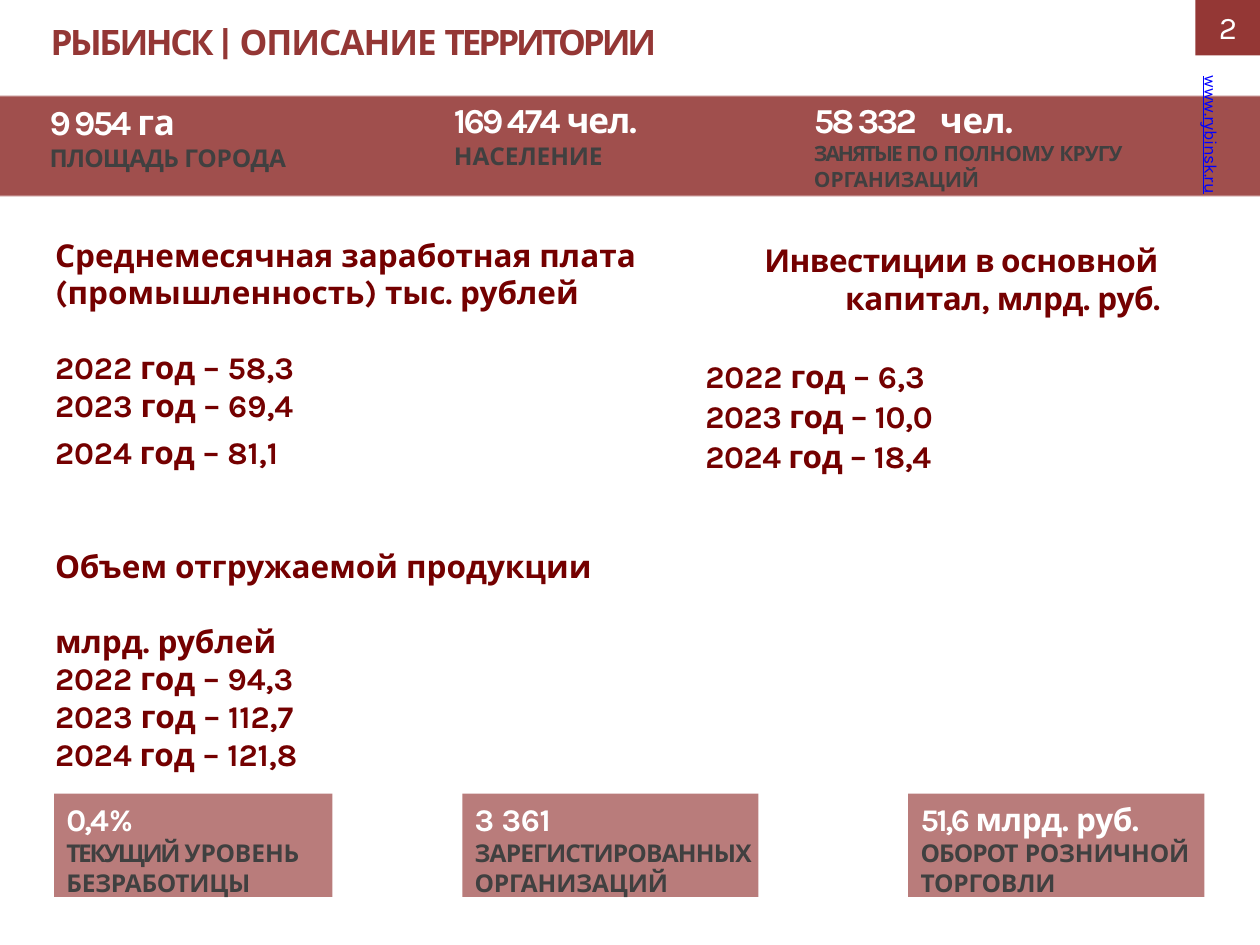
from lxml.etree import SubElement
from pptx import Presentation
from pptx.dml.color import RGBColor
from pptx.enum.shapes import MSO_SHAPE
from pptx.enum.text import MSO_ANCHOR
from pptx.oxml.ns import qn
from pptx.util import Cm, Pt

FONT = "Karla"
MAROON, DARK_RED, GREY, WHITE, BLUE = "943735", "740000", "404040", "FFFFFF", "0000FF"
BAND_TOPS = [1.96, 1.93]
TITLE = [("РЫБИНСК ", -1.4), ("| ", 0), ("ОПИСАНИЕ ", -0.6), ("ТЕРРИТОРИИ", -1.8)]

CITY_STATS = [
    {"at": (0.97, 2, 4.93, 1.52), "size": 14,
     "value": [("9 954 ", -1.6), ("га", -0.2)],
     "label": [[("ПЛОЩАДЬ ", -0.5), ("ГОРОДА", -0.1)]]},
    {"at": (9.12, 1.96, 4.27, 1.52), "size": 14,
     "value": [("169 474 ", -1.6), ("чел.", -0.7)],
     "label": [[("НАСЕЛЕНИЕ", -0.1)]]},
    {"at": (16.38, 1.96, 6.38, 1.93), "size": 12,
     "value": [("58 332\t", -1.6), ("чел.", -0.2)],
     "label": [[("ЗАНЯТЫЕ ", -1.2), ("ПО", 0), (" ПОЛНОМУ ", -0.3), ("КРУГУ", -0.5)],
               [("ОРГАНИЗАЦИЙ", -0.1)]]},
]

ECONOMY_STATS = [
    {"left": 1.09, "width": 5.61,
     "value": [("0,4", -1.2), ("%", -6.8)],
     "label": [[("ТЕКУЩИЙ ", -1.4), ("УРОВЕНЬ", -0.1)], [("БЕЗРАБОТИЦЫ", -0.2)]]},
    {"left": 9.32, "width": 5.97,
     "value": [("3 361", -0.2)],
     "label": [[("ЗАРЕГИСТИРОВАННЫХ", -0.5)], [("ОРГАНИЗАЦИЙ", -0.1)]]},
    {"left": 18.31, "width": 5.97,
     "value": [("51,6 ", -1.4), ("млрд. руб.", -0.2)],
     "label": [[("ОБОРОТ", -0.6), (" РОЗНИЧНОЙ", -0.1)], [("ТОРГОВЛИ", -0.1)]]},
]

WAGES_AND_OUTPUT = [
    ("Среднемесячная заработная плата (промышленность) тыс. рублей", 0),
    ("2022 год – 58,3", 21),
    ("2023 год – 69,4", 0),
    ("2024 год – 81,1", 5.5),
    ("Объем отгружаемой продукции", 43.5),
    ("млрд. рублей", 21),
    ("2022 год – 94,3", 0),
    ("2023 год – 112,7", 0),
    ("2024 год – 121,8", 0),
]

INVESTMENT_TITLE = [("Инвестиции ", -0.3), ("в ", -1.1), ("основной ", -0.1),
                    ("капитал, млрд. руб.", -0.2)]
INVESTMENTS = [("2022 год – 6,3", 0, 23.3), ("2023 год – 10,0", -0.2, 1.1),
               ("2024 год – 18,4", -0.2, 1.1)]


def rgb(value):
    return RGBColor.from_string(value)


def line(runs, size, color, bold=True, before=0, margin=0.0, indent=0.0, tab=None, underline=None):
    return dict(runs=runs, size=size, color=color, bold=bold, before=before,
                margin=margin, indent=indent, tab=tab, underline=underline)


def write(shape, lines, inset=(0, 0.03)):
    frame = shape.text_frame
    frame.word_wrap = True
    frame.vertical_anchor = MSO_ANCHOR.TOP
    frame.margin_left = frame.margin_right = Cm(inset[0])
    frame.margin_top = Cm(inset[1])
    frame.margin_bottom = 0
    for number, item in enumerate(lines):
        paragraph = frame.add_paragraph() if number else frame.paragraphs[0]
        properties = paragraph._p.get_or_add_pPr()
        properties.set("marL", str(Cm(item["margin"])))
        properties.set("indent", str(Cm(item["indent"])))
        properties.set("algn", "l")
        if item["before"]:
            paragraph.space_before = Pt(item["before"])
        if item["tab"]:
            tabs = SubElement(properties, qn("a:tabLst"))
            SubElement(tabs, qn("a:tab"), pos=str(Cm(item["tab"])), algn="l")
        font = paragraph.font
        font.name, font.size = FONT, Pt(item["size"])
        font.bold, font.underline = item["bold"], item["underline"]
        font.color.rgb = rgb(item["color"])
        for text, spacing in item["runs"]:
            run = paragraph.add_run()
            run.text = text
            if spacing:
                run._r.get_or_add_rPr().set("spc", str(round(spacing * 100)))


def add_text(slide, at, lines, inset=(0, 0.03)):
    box = slide.shapes.add_textbox(*map(Cm, at))
    write(box, lines, inset)
    return box


def add_block(slide, at, opacity=100):
    block = slide.shapes.add_shape(MSO_SHAPE.RECTANGLE, *map(Cm, at))
    block.shadow.inherit = False
    block.line.fill.background()
    block.fill.solid()
    block.fill.fore_color.rgb = rgb(MAROON)
    if opacity < 100:
        color = block._element.spPr.find(".//" + qn("a:srgbClr"))
        SubElement(color, qn("a:alpha"), val=str(opacity * 1000))
    return block


def stat_lines(stat, value_size, label_size, margin, tab=None):
    labels = [line(runs, label_size, GREY, margin=margin, before=0 if row else 0.1)
              for row, runs in enumerate(stat["label"])]
    return [line(stat["value"], value_size, WHITE, margin=margin, tab=tab)] + labels


def main():
    deck = Presentation()
    deck.slide_width, deck.slide_height = Cm(25.4), Cm(19.05)
    slide = deck.slides.add_slide(deck.slide_layouts[6])

    for top in BAND_TOPS:
        add_block(slide, (0, top, 25.4, 2), 65)
    add_text(slide, (0.99, 0.38, 21.08, 0.91), [line(TITLE, 20, MAROON, margin=0.03)])
    add_block(slide, (24.1, 0, 1.3, 1.12))
    add_text(slide, (24.54, 0.13, 0.43, 0.84),
             [line([("2", -0.5)], 18, WHITE, bold=False, margin=0.03)])

    for stat in CITY_STATS:
        add_text(slide, stat["at"], stat_lines(stat, 20, stat["size"], 0.03, tab=2.64))

    site = add_text(slide, (24.13, 1.47, 0.51, 2.59),
                    [line([("www.rybinsk.ru", -0.1)], 10, BLUE, bold=False,
                          margin=0.03, underline=True)])
    site.text_frame._txBody.bodyPr.set("vert", "vert")

    for stat in ECONOMY_STATS:
        block = add_block(slide, (stat["left"], 16, stat["width"], 2.08), 65)
        write(block, stat_lines(stat, 18, 14, 0.25), (0, 0.13))

    investments = [line(INVESTMENT_TITLE, 18, DARK_RED, margin=2.87, indent=-1.63)]
    investments += [line([(text, spacing)], 18, DARK_RED, before=before, margin=0.05)
                    for text, spacing, before in INVESTMENTS]
    add_text(slide, (14.17, 4.83, 10.08, 4.8), investments)

    add_text(slide, (0.86, 4.62, 12.7, 11.28),
             [line([(text, 0)], 18, DARK_RED, before=before)
              for text, before in WAGES_AND_OUTPUT], (0.25, 0.13))

    deck.save("out.pptx")


if __name__ == "__main__":
    main()
